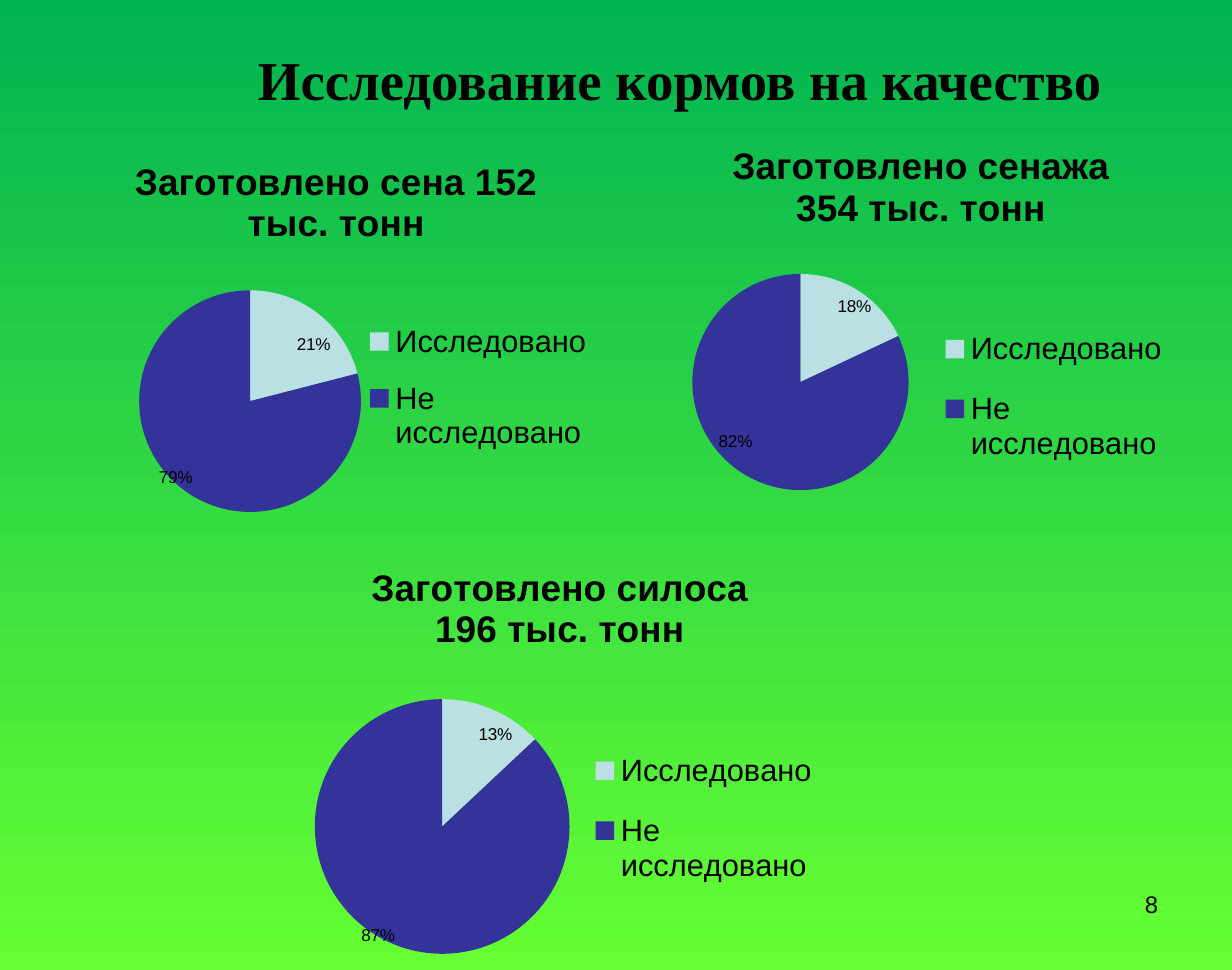
import pptx
import pptx.chart.data
import pptx.dml.color
import pptx.enum.chart
import pptx.enum.text
import pptx.oxml
import pptx.oxml.ns
import pptx.util
from pptx.util import Inches

CATEGORIES = ["Исследовано", "Не исследовано "]
SLICE_COLORS = ["BBE0E3", "333399"]


def rgb(value):
    return pptx.dml.color.RGBColor.from_string(value)


def set_layout(parent, index, inner=False, mode="edge", **fractions):
    """Give a chart part a manual layout in fractions of the chart."""
    qn = pptx.oxml.ns.qn
    for old in parent.findall(qn("c:layout")):
        parent.remove(old)
    parts = ['<c:layoutTarget val="inner"/>'] if inner else []
    if mode == "edge":
        parts += ['<c:xMode val="edge"/>', '<c:yMode val="edge"/>']
    parts += [f'<c:{k} val="{v}"/>' for k, v in fractions.items()]
    parent.insert(index, pptx.oxml.parse_xml(
        f'<c:layout {pptx.oxml.ns.nsdecls("c")}><c:manualLayout>'
        f'{"".join(parts)}</c:manualLayout></c:layout>'))


class Deck:
    """Style and current slide."""
    font, color = "Arial", "000000"

    def __init__(self, prs):
        self.s = prs.slides.add_slide(prs.slide_layouts[6])

    def style(self, font, size, bold=False, name=None):
        font.name, font.size, font.bold = name or self.font, pptx.util.Pt(size), bold
        font.color.rgb = rgb(self.color)

    def background(self, bottom, top):
        fill = self.s.background.fill
        fill.gradient()
        fill.gradient_angle = 90
        for stop, color in zip(fill.gradient_stops, (bottom, top)):
            stop.color.rgb = rgb(color)

    def text(self, text, box, size, align, anchor="TOP", **font):
        tf = self.s.shapes.add_textbox(*map(Inches, box)).text_frame
        tf.word_wrap = True
        tf.vertical_anchor = pptx.enum.text.MSO_ANCHOR[anchor]
        p = tf.paragraphs[0]
        p.text = text
        p.alignment = pptx.enum.text.PP_ALIGN[align]
        self.style(p.font, size, **font)

    def pie(self, title, share, box, title_at, plot, legend, shifts, name="Series 1"):
        data = pptx.chart.data.CategoryChartData(number_format="0%")
        data.categories = CATEGORIES
        data.add_series(name, [share, round(1 - share, 2)])
        chart = self.s.shapes.add_chart(
            pptx.enum.chart.XL_CHART_TYPE.PIE, *map(Inches, box), data).chart
        self.style(chart.font, 18)

        chart.has_title = True
        p = chart.chart_title.text_frame.paragraphs[0]
        p.text = title
        self.style(p.font, 21.6, bold=True)
        set_layout(chart.chart_title._element, 1, **dict(zip("xy", title_at)))

        chart.has_legend = True
        chart.legend.position = pptx.enum.chart.XL_LEGEND_POSITION.RIGHT
        chart.legend.include_in_layout = False
        set_layout(chart.legend._element, 1, **dict(zip("xywh", legend)))
        set_layout(chart._chartSpace.chart.plotArea, 0, inner=True,
                   **dict(zip("xywh", plot)))

        points = chart.plots[0].series[0].points
        for i, (color, shift) in enumerate(zip(SLICE_COLORS, shifts)):
            fill = points[i].format.fill
            fill.solid()
            fill.fore_color.rgb = rgb(color)
            label = points[i].data_label
            self.style(label.font, 10)
            label.position = pptx.enum.chart.XL_LABEL_POSITION.INSIDE_END
            set_layout(label._dLbl, 1, mode="shift", **dict(zip("xy", shift)))


def main():
    prs = pptx.Presentation()
    prs.slide_width, prs.slide_height = Inches(10), pptx.util.Pt(567)
    deck = Deck(prs)
    deck.background("66FF33", "00B352")
    deck.text("Исследование кормов на качество", (1.26, 0.25, 8.52, 0.77), 32,
              "CENTER", "MIDDLE", bold=True, name="Times New Roman")
    deck.text("8", (7.17, 7.17, 2.33, 0.55), 14, "RIGHT")
    hay = "Заготовлено сена 152 тыс. тонн"
    deck.pie(hay, 0.21, (0.5, 1.1, 4.5, 3.22),
             (0.12, 0.04), (0.14, 0.37, 0.4, 0.6), (0.53, 0.42, 0.45, 0.43),
             [(0.03, 0.04), (-0.05, 0.01)], name=hay)
    deck.pie("Заготовлено сенажа 354 тыс. тонн", 0.18, (5.17, 1.1, 4.5, 3.31),
             (0.16, -0.01), (0.1, 0.31, 0.39, 0.59), (0.53, 0.42, 0.45, 0.44),
             [(0.03, 0), (-0.05, -0.04)])
    deck.pie("Заготовлено силоса 196 тыс. тонн", 0.13, (2.33, 4.49, 4.5, 3.39),
             (0.14, 0.01), (0.05, 0.35, 0.46, 0.61), (0.53, 0.42, 0.45, 0.43),
             [(0.04, 0.02), (-0.06, 0.02)])
    prs.save("out.pptx")


if __name__ == "__main__":
    main()
